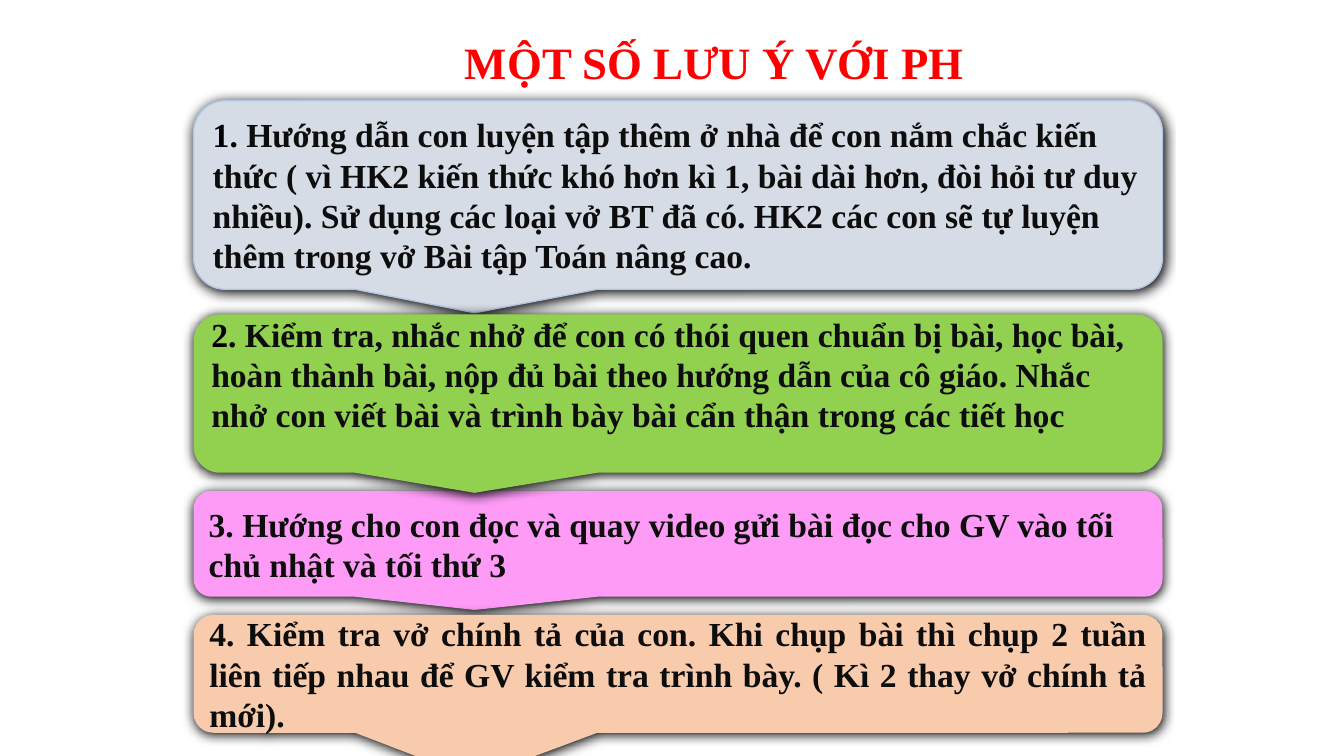
from lxml.etree import SubElement
from pptx import Presentation
from pptx.dml.color import RGBColor
from pptx.enum.shapes import MSO_SHAPE
from pptx.enum.text import MSO_ANCHOR, MSO_AUTO_SIZE, PP_ALIGN
from pptx.oxml.ns import qn
from pptx.util import Inches, Pt

THEME = {
    "font": "Times New Roman",
    "title_size": 32, "body_size": 24,
    "title": "FF0000", "number": "000000", "ink": "0D0D0D",
    "grey": "D6DCE5", "grey_line": "B4C7E7",
    "green": "92D050", "pink": "FD9BF6", "peach": "F8CBAD",
    "shadow": "000000",
}
LEFT, WIDTH = 1.92, 9.61
TAIL_X, CORNER = -0.21, 0.167


def add_run(p, text, size, color):
    r = p.add_run()
    r.text = text
    style = {"name": THEME["font"], "size": Pt(THEME[size]), "bold": True}
    for key, value in style.items():
        setattr(r.font, key, value)
    r.font.color.rgb = RGBColor.from_string(THEME[color])


def add_shadow(sp):
    """Give the shape a soft shadow just below it."""
    sp.shadow.inherit = False
    effects = sp._element.spPr.find(qn("a:effectLst"))
    outer = SubElement(effects, qn("a:outerShdw"), blurRad=str(Pt(8.5)),
                       dist=str(Pt(1)), dir="5400000", algn="t", rotWithShape="0")
    SubElement(outer, qn("a:srgbClr"), val=THEME["shadow"])


prs = Presentation()
prs.slide_width, prs.slide_height = Inches(13.33), Inches(7.5)
s = prs.slides.add_slide(prs.slide_layouts[5])

title = s.shapes.title
title.left, title.top, title.width, title.height = map(Inches, (2.64, 0.29, 8.89, 0.59))
tf = title.text_frame
for key, value in {"word_wrap": True, "auto_size": MSO_AUTO_SIZE.NONE,
                   "vertical_anchor": MSO_ANCHOR.TOP}.items():
    setattr(tf, key, value)
tf.paragraphs[0].alignment = PP_ALIGN.CENTER
add_run(tf.paragraphs[0], "MỘT SỐ LƯU Ý VỚI PH", "title_size", "title")

# From back to front: top, height, tail depth, bottom inset, fill, number colour,
# alignment, number, text
notes = [
    (1.0, 1.87, 0.625, 0.05, "grey", "number", PP_ALIGN.LEFT, "1. ",
     "Hướng dẫn con luyện tập thêm ở nhà để con nắm chắc kiến thức ( vì HK2 kiến thức "
     "khó hơn kì 1, bài dài hơn, đòi hỏi tư duy nhiều). Sử dụng các loại vở BT đã có. "
     "HK2 các con sẽ tự luyện thêm trong vở Bài tập Toán nâng cao."),
    (4.87, 1.05, 0.625, 0.05, "pink", "ink", PP_ALIGN.LEFT, "3. ",
     "Hướng cho con đọc và quay video gửi bài đọc cho GV vào tối chủ nhật và tối thứ 3"),
    (3.12, 1.57, 0.627, 0.44, "green", "number", PP_ALIGN.LEFT, "2. ",
     "Kiểm tra, nhắc nhở để con có thói quen chuẩn bị bài, học bài, hoàn thành bài, nộp "
     "đủ bài theo hướng dẫn của cô giáo. Nhắc nhở con viết bài và trình bày bài cẩn thận "
     "trong các tiết học"),
    (6.1, 1.17, 0.888, 0.05, "peach", "ink", PP_ALIGN.JUSTIFY, "4. ",
     "Kiểm tra vở chính tả của con. Khi chụp bài thì chụp 2 tuần liên tiếp nhau để GV "
     "kiểm tra trình bày. ( Kì 2 thay vở chính tả mới)."),
]
for top, height, tail, inset, fill, number_color, align, number, text in notes:
    sp = s.shapes.add_shape(MSO_SHAPE.ROUNDED_RECTANGULAR_CALLOUT,
                            *map(Inches, (LEFT, top, WIDTH, height)))
    for i, value in enumerate((TAIL_X, tail, CORNER)):
        sp.adjustments[i] = value
    sp.fill.solid()
    sp.fill.fore_color.rgb = RGBColor.from_string(THEME[fill])
    if fill == "grey":
        sp.line.color.rgb = RGBColor.from_string(THEME["grey_line"])
        sp.line.width = Pt(1)
    else:
        sp.line.fill.background()
    add_shadow(sp)
    tf = sp.text_frame
    for key, value in {"word_wrap": True, "vertical_anchor": MSO_ANCHOR.MIDDLE,
                       "margin_bottom": Inches(inset)}.items():
        setattr(tf, key, value)
    p = tf.paragraphs[0]
    p.alignment = align
    add_run(p, number, "body_size", number_color)
    add_run(p, text, "body_size", "ink")

prs.save("out.pptx")
